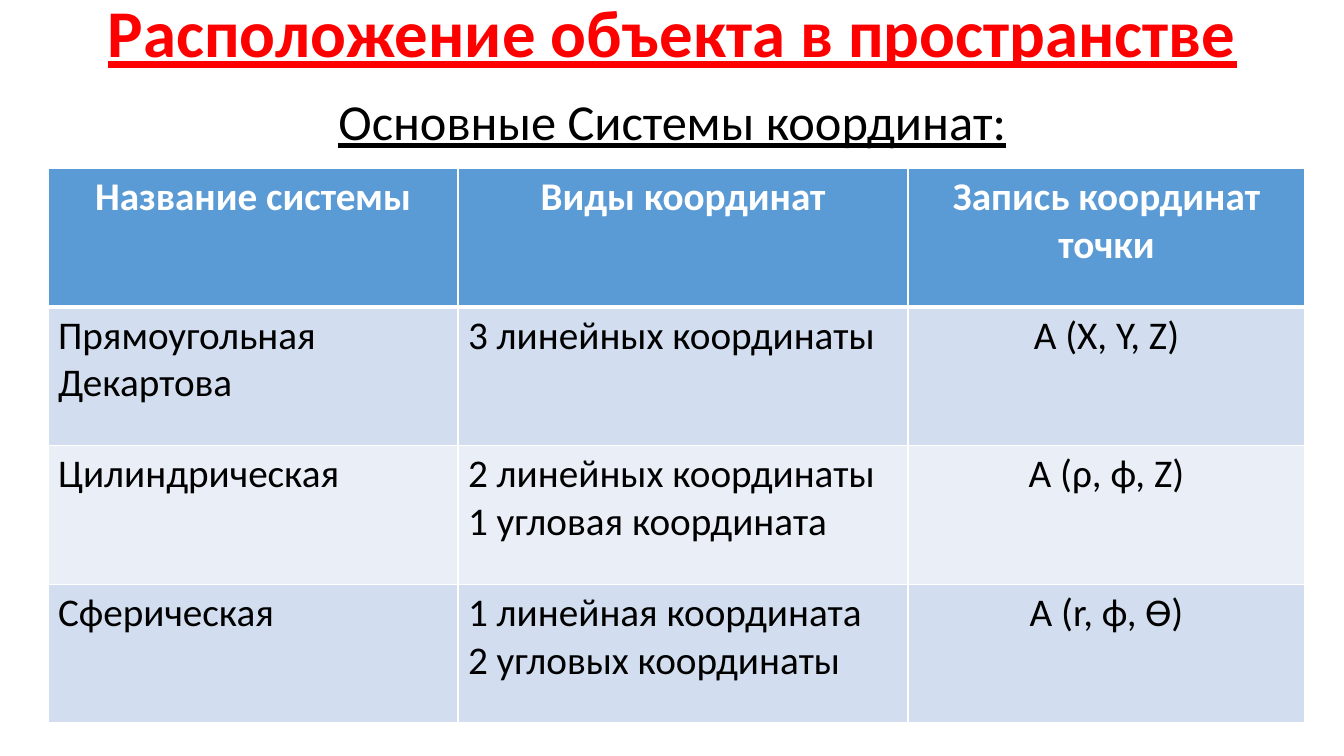
from lxml import etree
from pptx import Presentation
from pptx import util as u
from pptx.dml.color import RGBColor
from pptx.enum import text
from pptx.oxml import ns

PX = 914400 / 100.8
FONT = "Calibri"
RED = RGBColor(0xFF, 0x00, 0x00)
BLACK = RGBColor(0x00, 0x00, 0x00)
WHITE = RGBColor(0xFF, 0xFF, 0xFF)
HEADER_BLUE = RGBColor(0x5B, 0x9B, 0xD5)
BAND_DARK = RGBColor(0xD2, 0xDE, 0xEF)
BAND_LIGHT = RGBColor(0xEA, 0xEF, 0xF7)

COLUMN_WIDTHS = [410, 450, 397]
SYSTEMS = [
    ("Название системы", "Виды координат", "Запись координат точки"),
    ("Прямоугольная Декартова", "3 линейных координаты", "А (X, Y, Z)"),
    ("Цилиндрическая", "2 линейных координаты\v1 угловая координата", "А (ρ, ϕ, Z)"),
    ("Сферическая", "1 линейная координата\v2 угловых координаты", "А (r, ϕ, Ɵ)"),
]


def px(length):
    return u.Emu(round(length * PX))


def write(frame, words, size, color, centered=True, bold=False, underline=False):
    frame.text = words
    paragraph = frame.paragraphs[0]
    paragraph.alignment = text.PP_ALIGN.CENTER if centered else text.PP_ALIGN.LEFT
    for run in paragraph.runs:
        run.font.name = FONT
        run.font.size = u.Pt(size)
        run.font.color.rgb = color
        run.font.bold = bold
        run.font.underline = underline
    return paragraph


def add_heading(slide, box, words, size, color, margin_top, bold=False):
    """Underlined, centred line of text at the top of its box."""
    frame = slide.shapes.add_textbox(*map(px, box)).text_frame
    frame.word_wrap = True
    frame.vertical_anchor = text.MSO_ANCHOR.TOP
    frame.margin_top = px(margin_top)
    write(frame, words, size, color, bold=bold, underline=True).line_spacing = 0.9


def set_border(cell, side, points):
    properties = cell._tc.get_or_add_tcPr()
    line = etree.SubElement(properties, ns.qn(f"a:ln{side}"), w=str(u.Pt(points)))
    fill = etree.SubElement(line, ns.qn("a:solidFill"))
    etree.SubElement(fill, ns.qn("a:srgbClr"), val=str(WHITE))


def add_systems_table(slide, box):
    frame = slide.shapes.add_table(len(SYSTEMS), len(COLUMN_WIDTHS), *map(px, box))
    table = frame.table
    for column, width in zip(table.columns, COLUMN_WIDTHS):
        column.width = px(width)
    for r, system in enumerate(SYSTEMS):
        table.rows[r].height = px(box[3] / len(SYSTEMS))
        header = r == 0
        band = HEADER_BLUE if header else BAND_DARK if r % 2 else BAND_LIGHT
        for c, words in enumerate(system):
            cell = table.cell(r, c)
            set_border(cell, "L", 1)
            set_border(cell, "R", 1)
            set_border(cell, "T", 3 if r == 1 else 1)
            set_border(cell, "B", 3 if header else 1)
            cell.fill.solid()
            cell.fill.fore_color.rgb = band
            write(cell.text_frame, words, 28, WHITE if header else BLACK,
                  centered=header or c == 2, bold=header)


def build_coordinates_slide(deck):
    slide = deck.slides.add_slide(deck.slide_layouts[6])
    add_heading(slide, (93, 0, 1159, 139), "Расположение объекта в пространстве",
                47.7, RED, margin_top=0, bold=True)
    add_heading(slide, (93, 92, 1159, 67), "Основные Системы координат:",
                36, BLACK, margin_top=5)
    add_systems_table(slide, (48, 168, sum(COLUMN_WIDTHS), 555))


def main():
    deck = Presentation()
    deck.slide_width, deck.slide_height = px(1344), px(756)
    build_coordinates_slide(deck)
    deck.save("out.pptx")


if __name__ == "__main__":
    main()
